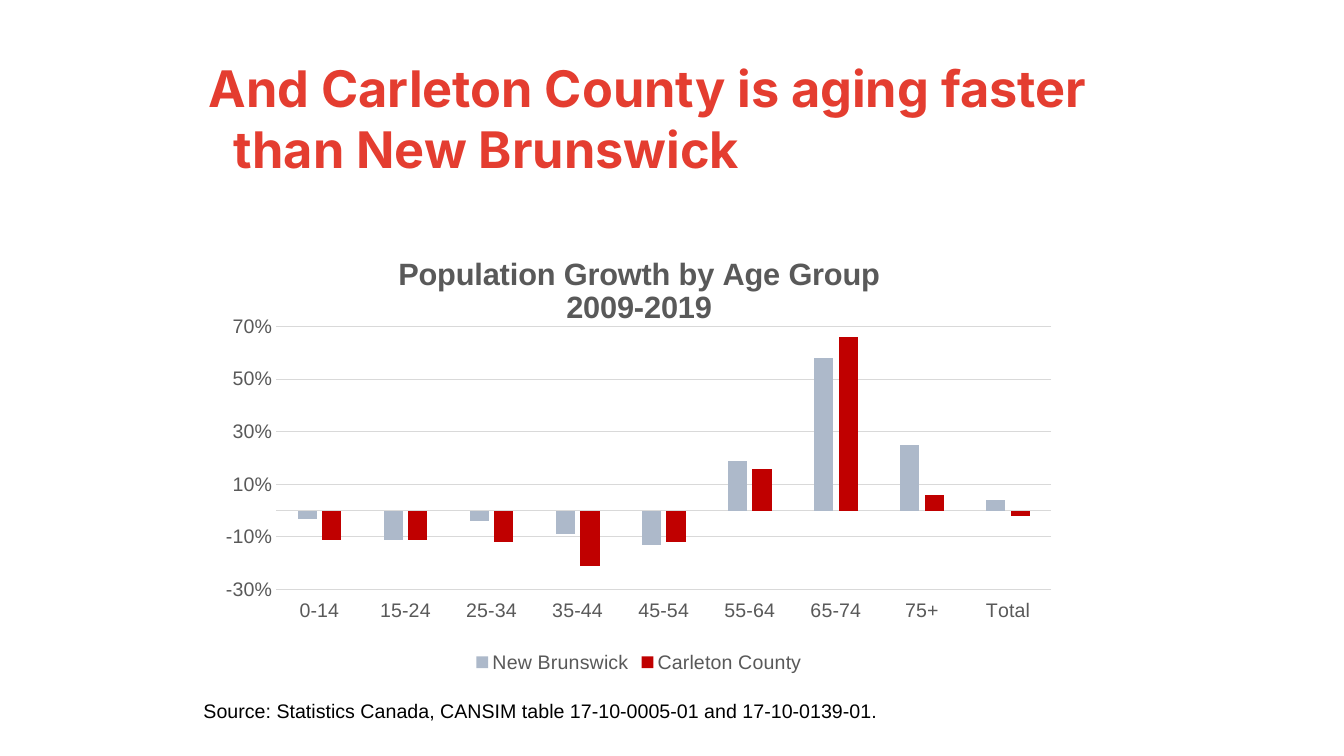
import dataclasses

import lxml.etree
import pptx
import pptx.chart.data
import pptx.dml.color
import pptx.enum.chart
import pptx.enum.text
import pptx.oxml
import pptx.oxml.ns
import pptx.util

Inches = pptx.util.Inches
Pt = pptx.util.Pt

RED_TITLE = "E43D30"
GREY_TEXT = "595959"
GREY_LINE = "D9D9D9"
BLACK = "000000"


@dataclasses.dataclass(frozen=True)
class Region:
    name: str
    color: str
    growth: tuple[float, ...]


AGE_GROUPS = ("0-14", "15-24", "25-34", "35-44", "45-54", "55-64", "65-74", "75+", "Total")
REGIONS = (
    Region("New Brunswick", "ADB9CA",
           (-0.03, -0.11, -0.04, -0.09, -0.13, 0.19, 0.58, 0.25, 0.04)),
    Region("Carleton County", "C00000",
           (-0.11, -0.11, -0.12, -0.21, -0.12, 0.16, 0.66, 0.06, -0.02)),
)


def rgb(color: str) -> pptx.dml.color.RGBColor:
    return pptx.dml.color.RGBColor.from_string(color)


def format_font(font, size: float, color: str, name: str = "Arial", bold: bool = False) -> None:
    font.size = Pt(size)
    font.name = name
    font.bold = bold
    font.color.rgb = rgb(color)


def write(frame, text: str, *, align=pptx.enum.text.PP_ALIGN.LEFT, **font_format) -> None:
    """Write each line of the text as one formatted paragraph."""
    for index, line in enumerate(text.split("\n")):
        paragraph = frame.paragraphs[0] if index == 0 else frame.add_paragraph()
        paragraph.alignment = align
        run = paragraph.add_run()
        run.text = line
        format_font(run.font, **font_format)


def style_line(line, color: str) -> None:
    line.color.rgb = rgb(color)
    line.width = Pt(0.75)


def style_axis(axis) -> None:
    axis.major_tick_mark = pptx.enum.chart.XL_TICK_MARK.NONE
    axis.minor_tick_mark = pptx.enum.chart.XL_TICK_MARK.NONE
    format_font(axis.tick_labels.font, 14, GREY_TEXT)


def place_plot(chart, x: float, y: float, w: float, h: float) -> None:
    """Fix the inner plot area, in fractions of the chart."""
    plot_area = chart.plots[0]._element.getparent()
    for old_layout in plot_area.findall(pptx.oxml.ns.qn("c:layout")):
        plot_area.remove(old_layout)
    layout = pptx.oxml.parse_xml(f"<c:layout {pptx.oxml.ns.nsdecls('c')}/>")
    manual = lxml.etree.SubElement(layout, pptx.oxml.ns.qn("c:manualLayout"))
    settings = {"layoutTarget": "inner", "xMode": "edge", "yMode": "edge",
                "x": x, "y": y, "w": w, "h": h}
    for tag, value in settings.items():
        lxml.etree.SubElement(manual, pptx.oxml.ns.qn(f"c:{tag}")).set("val", str(value))
    plot_area.insert(0, layout)


def add_headline(slide) -> None:
    headline = slide.shapes.title
    headline.left, headline.top = Inches(1.72), Inches(0.52)
    headline.width, headline.height = Inches(9.71), Inches(1.55)
    frame = headline.text_frame
    frame.word_wrap = True
    frame.auto_size = pptx.enum.text.MSO_AUTO_SIZE.NONE
    frame.vertical_anchor = pptx.enum.text.MSO_ANCHOR.TOP
    write(frame, "And Carleton County is aging faster than New Brunswick",
          size=36, color=RED_TITLE, name="Inter", bold=True)
    # Hanging indent
    properties = frame.paragraphs[0]._p.get_or_add_pPr()
    properties.set("marL", str(Inches(0.5)))
    properties.set("indent", str(Inches(-0.25)))


def add_growth_chart(slide) -> None:
    growth_data = pptx.chart.data.CategoryChartData(number_format="0%")
    growth_data.categories = AGE_GROUPS
    for region in REGIONS:
        growth_data.add_series(region.name, region.growth)
    chart = slide.shapes.add_chart(
        pptx.enum.chart.XL_CHART_TYPE.COLUMN_CLUSTERED,
        Inches(2.24), Inches(2.37), Inches(8.19), Inches(4.35), growth_data).chart
    format_font(chart.font, 10, BLACK)

    # Chart title
    chart.has_title = True
    chart.chart_title.include_in_layout = False
    write(chart.chart_title.text_frame, "Population Growth by Age Group\n2009-2019",
          align=pptx.enum.text.PP_ALIGN.CENTER, size=22, color=GREY_TEXT, bold=True)

    # Columns
    columns = chart.plots[0]
    columns.gap_width = 219
    columns.overlap = -27
    columns.vary_by_categories = False
    for series, region in zip(columns.series, REGIONS):
        series.invert_if_negative = False
        series.format.fill.solid()
        series.format.fill.fore_color.rgb = rgb(region.color)
    place_plot(chart, 0.06, 0.2, 0.94, 0.6)

    # Axes
    ages, growth = chart.category_axis, chart.value_axis
    style_axis(ages)
    ages.tick_label_position = pptx.enum.chart.XL_TICK_LABEL_POSITION.LOW
    style_line(ages.format.line, GREY_LINE)
    style_axis(growth)
    growth.minimum_scale, growth.maximum_scale, growth.major_unit = -0.3, 0.7, 0.2
    growth.tick_labels.number_format = "0%"
    growth.tick_labels.number_format_is_linked = False
    growth.format.line.fill.background()
    style_line(growth.major_gridlines.format.line, GREY_LINE)

    # Legend
    chart.has_legend = True
    chart.legend.position = pptx.enum.chart.XL_LEGEND_POSITION.BOTTOM
    chart.legend.include_in_layout = False
    format_font(chart.legend.font, 14, GREY_TEXT)


def add_source_note(slide) -> None:
    note = slide.shapes.add_textbox(Inches(1.92), Inches(6.88), Inches(9.36), Inches(0.34))
    note.text_frame.word_wrap = True
    note.text_frame.auto_size = pptx.enum.text.MSO_AUTO_SIZE.SHAPE_TO_FIT_TEXT
    write(note.text_frame,
          "Source: Statistics Canada, CANSIM table 17-10-0005-01 and 17-10-0139-01.",
          size=14, color=BLACK)


def main() -> None:
    deck = pptx.Presentation()
    deck.slide_width, deck.slide_height = Inches(13.33), Inches(7.5)
    slide = deck.slides.add_slide(deck.slide_layouts.get_by_name("Title Only"))
    add_headline(slide)
    add_growth_chart(slide)
    add_source_note(slide)
    deck.save("out.pptx")


if __name__ == "__main__":
    main()
